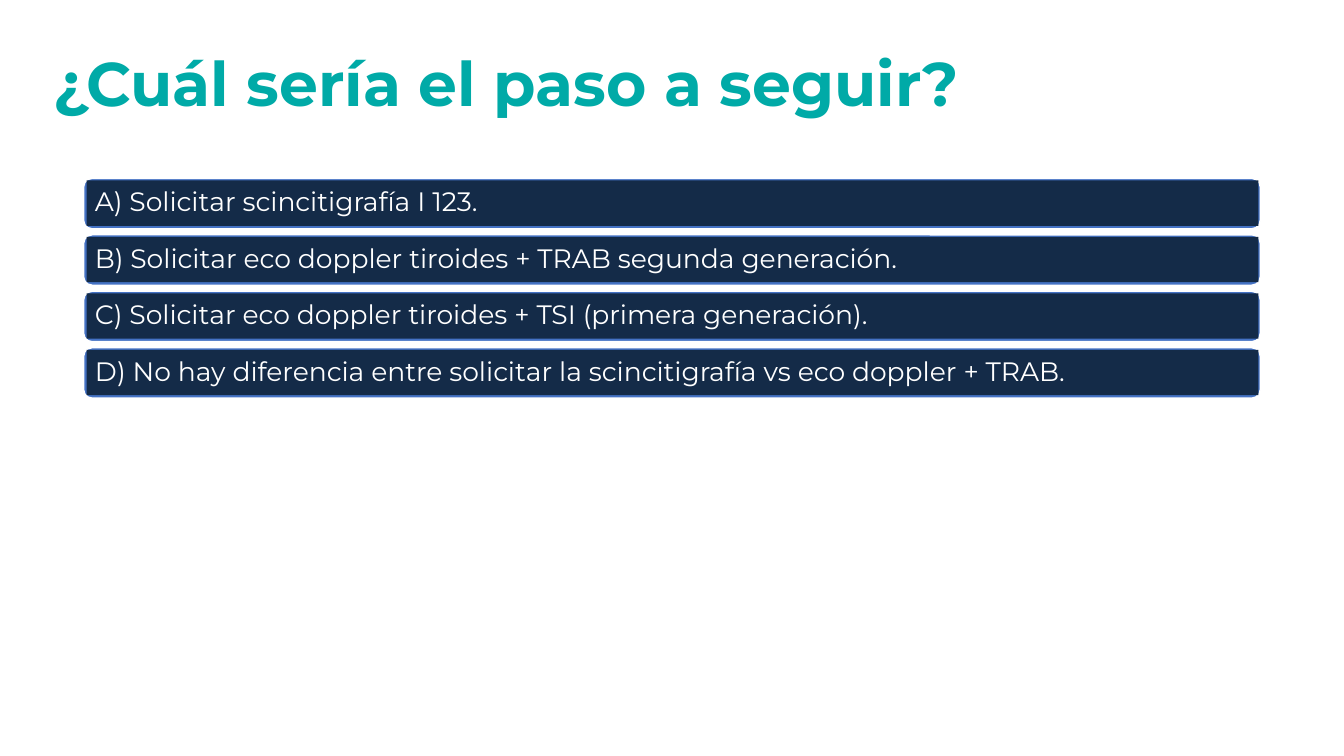
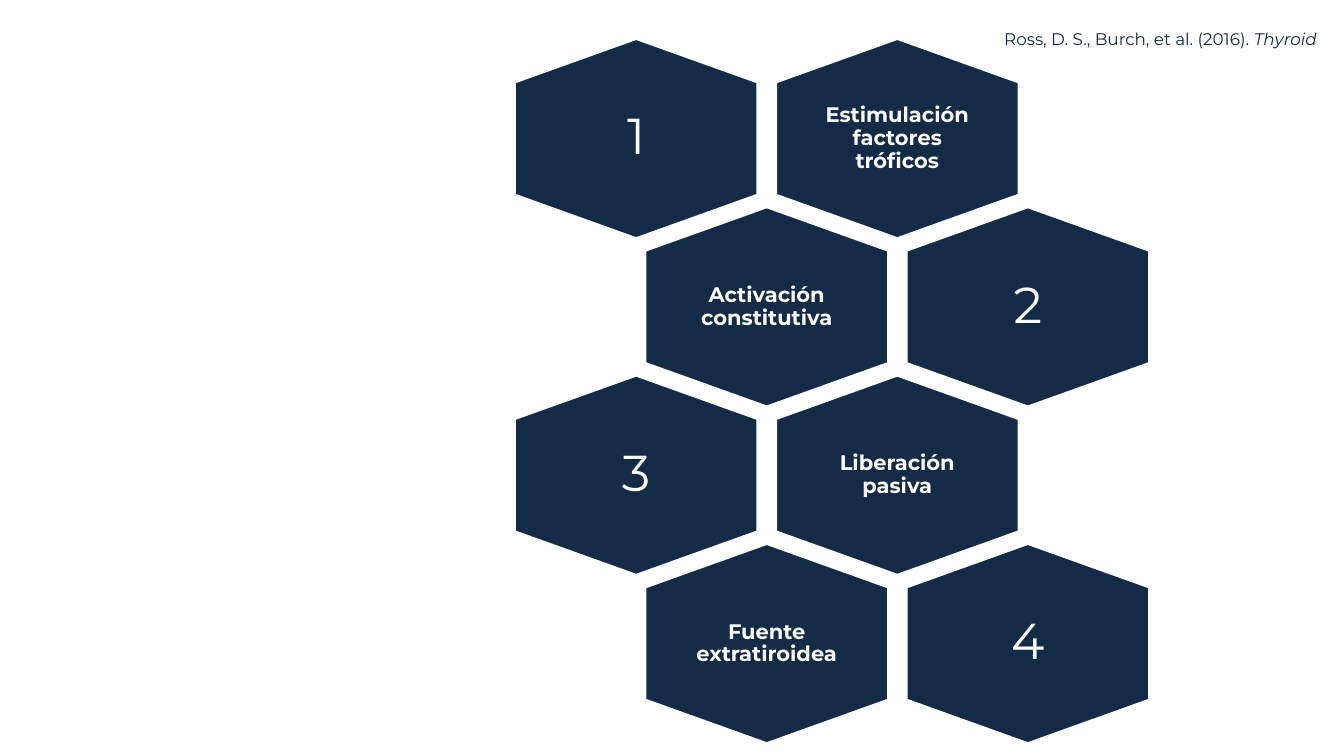
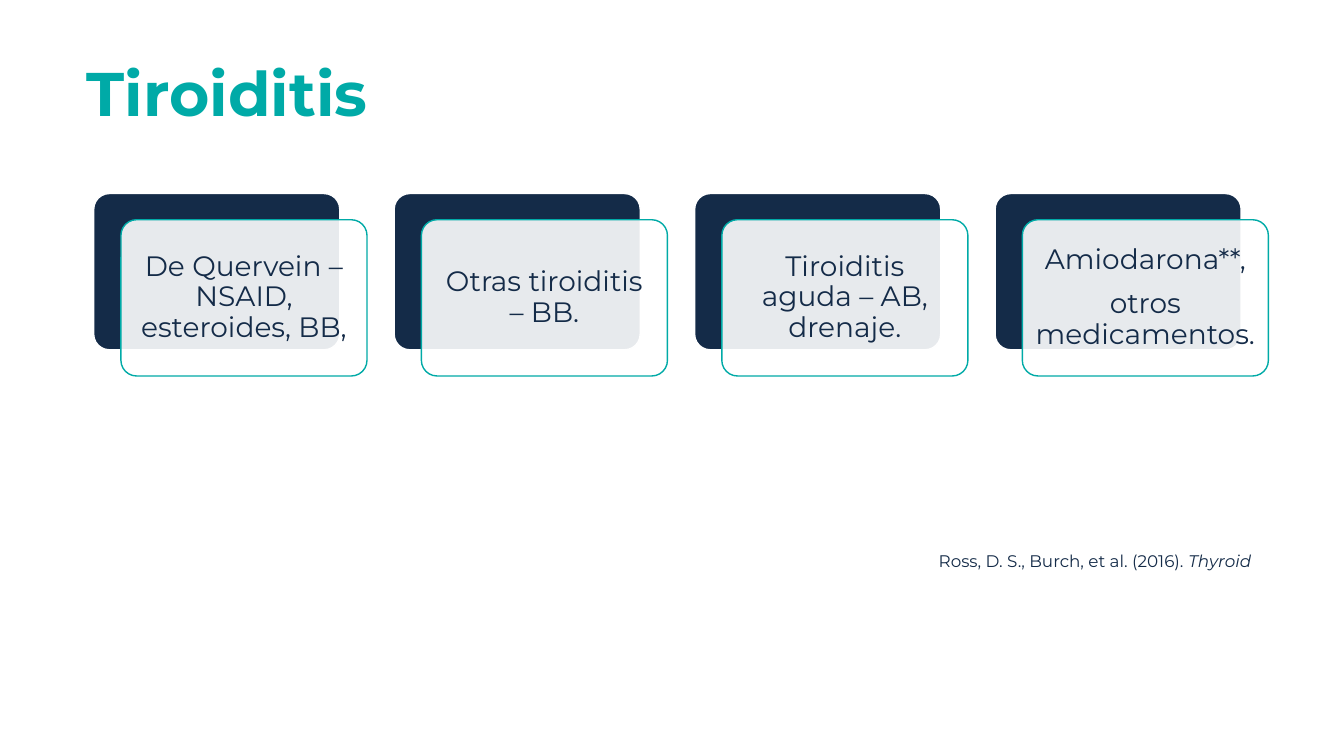
from dataclasses import dataclass

from lxml import etree
from pptx import Presentation
from pptx import util as u
from pptx.dml.color import RGBColor
from pptx.enum import shapes as kinds, text as txt
from pptx.oxml.ns import qn
from pptx.shapes.autoshape import Shape
from pptx.slide import Slide
from pptx.text.text import TextFrame

FONT = "Montserrat"
NAVY, TEAL, BLUE, WHITE = "142B48", "00AAA7", "4472C4", "FFFFFF"
LEFT, MID, RIGHT = txt.PP_ALIGN.LEFT, txt.PP_ALIGN.CENTER, txt.PP_ALIGN.RIGHT
RECT = kinds.MSO_SHAPE.RECTANGLE
ROUND = kinds.MSO_SHAPE.ROUNDED_RECTANGLE


@dataclass(frozen=True)
class Box:
    x: float
    y: float
    w: float
    h: float

    def inches(self) -> list[u.Length]:
        return [u.Inches(n) for n in (self.x, self.y, self.w, self.h)]

    def move(self, dx: float, dy: float) -> "Box":
        return Box(self.x + dx, self.y + dy, self.w, self.h)


@dataclass(frozen=True)
class Type:
    size: float
    color: str
    bold: bool = False
    align: txt.PP_ALIGN = MID
    lead: float = 0.9


@dataclass(frozen=True)
class Card:
    lines: tuple[str, ...]
    inset: float = 0.14


HEAD = Type(44, TEAL, True, LEFT)
CHOICE = Type(19, WHITE, align=LEFT)
NUMBER = Type(36, WHITE)
CAUSE = Type(15, WHITE, True)
BODY = Type(20, NAVY)
CITE = Type(12, NAVY, align=RIGHT, lead=1)

CHOICES = (
    "A) Solicitar scincitigrafía I 123.",
    "B) Solicitar eco doppler tiroides + TRAB segunda generación.",
    "C) Solicitar eco doppler tiroides + TSI (primera generación).",
    "D) No hay diferencia entre solicitar la scincitigrafía vs eco doppler + TRAB.",
)
CAUSES = (
    "Estimulación factores tróficos",
    "Activación constitutiva",
    "Liberación pasiva",
    "Fuente extratiroidea",
)
CARDS = (
    Card(("De Quervein – NSAID, esteroides, BB,",)),
    Card(("Otras tiroiditis – BB.",)),
    Card(("Tiroiditis aguda – AB, drenaje.",)),
    Card(("Amiodarona**,", "otros medicamentos."), 0.05),
)


def rgb(code: str) -> RGBColor:
    return RGBColor.from_string(code)


def paint(shape: Shape, fill: str, line: str | None = None) -> None:
    shape.shadow.inherit = False
    shape.fill.solid()
    shape.fill.fore_color.rgb = rgb(fill)
    if line is None:
        shape.line.fill.background()
    else:
        shape.line.color.rgb = rgb(line)
        shape.line.width = u.Pt(1)


def fade(shape: Shape, share: int) -> None:
    """Set the opacity of a solid fill, in percent."""
    color = shape.fill._xPr.find(qn("a:solidFill"))[0]
    etree.SubElement(color, qn("a:alpha")).set("val", str(share * 1000))


def write(frame: TextFrame, lines: tuple[str, ...], style: Type,
          inset: float = 0.05, anchor: txt.MSO_ANCHOR = txt.MSO_ANCHOR.MIDDLE) -> None:
    frame.word_wrap = True
    frame.vertical_anchor = anchor
    frame.margin_left = frame.margin_right = u.Inches(inset)
    frame.margin_top = frame.margin_bottom = u.Inches(0.05)
    for i, line in enumerate(lines):
        para = frame.add_paragraph() if i else frame.paragraphs[0]
        para.add_run().text = line
        para.alignment = style.align
        para.line_spacing = style.lead
        para.space_before = u.Pt(10 if i else 0)
        para.font.name = FONT
        para.font.size = u.Pt(style.size)
        para.font.bold = style.bold
        para.font.color.rgb = rgb(style.color)


def block(slide: Slide, kind: kinds.MSO_SHAPE, box: Box, fill: str,
          line: str | None = None, bend: float = 0) -> Shape:
    shape = slide.shapes.add_shape(kind, *box.inches())
    if kind == ROUND:
        shape.adjustments[0] = bend
    paint(shape, fill, line)
    return shape


def title(slide: Slide, words: str, x: float, y: float) -> None:
    area = slide.shapes.add_textbox(*Box(x, y, 11.5, 1.45).inches())
    write(area.text_frame, (words,), HEAD)


def cite(slide: Slide, x: float, y: float) -> None:
    frame = slide.shapes.add_textbox(*Box(x, y, 3.4, 0.3).inches()).text_frame
    write(frame, ("Ross, D. S., Burch, et al. (2016). ",), CITE,
          anchor=txt.MSO_ANCHOR.TOP)
    run = frame.paragraphs[0].add_run()
    run.text = "Thyroid"
    run.font.italic = True


def hexagon(slide: Slide, box: Box, words: str, style: Type) -> None:
    """Draw a cell with points at top and bottom, and its text."""
    rise = 0.43
    mid, end, foot = box.x + box.w / 2, box.x + box.w, box.y + box.h
    dots = [(mid, box.y), (end, box.y + rise), (end, foot - rise),
            (mid, foot), (box.x, foot - rise), (box.x, box.y + rise)]
    first, *rest = [(u.Inches(x), u.Inches(y)) for x, y in dots]
    pen = slide.shapes.build_freeform(*first)
    pen.add_line_segments(rest, close=True)
    shape = pen.convert_to_shape()
    paint(shape, NAVY, WHITE)
    write(shape.text_frame, (words,), style, 0.44)


def quiz(slide: Slide) -> None:
    title(slide, "¿Cuál sería el paso a seguir?", 0.48, 0.13)
    for row, words in enumerate(CHOICES):
        frame = Box(0.83, 1.77 + row * 0.56, 11.67, 0.5)
        block(slide, ROUND, frame, BLUE, WHITE, 0.17)
        bar = block(slide, RECT, Box(0.86, frame.y + 0.02, 11.62, 0.45), NAVY)
        write(bar.text_frame, (words,), CHOICE, 0.08)


def causes(slide: Slide) -> None:
    pitch = 2.59
    for row, words in enumerate(CAUSES):
        odd = row % 2
        left = Box(5.11 + odd * pitch / 2, 0.39 + row * 1.67, 2.4, 1.97)
        pair = [(str(row + 1), NUMBER), (words, CAUSE)]
        for col, (label, style) in enumerate(reversed(pair) if odd else pair):
            hexagon(slide, left.move(col * pitch, 0), label, style)
    cite(slide, 9.71, 0.24)


def types(slide: Slide) -> None:
    title(slide, "Tiroiditis", 0.81, 0.23)
    for col, card in enumerate(CARDS):
        back = Box(0.93 + col * 2.98, 1.92, 2.44, 1.55)
        block(slide, ROUND, back, NAVY, WHITE, 0.1)
        panel = block(slide, ROUND, back.move(0.27, 0.26), WHITE, TEAL, 0.1)
        fade(panel, 90)
        write(panel.text_frame, card.lines, BODY, card.inset)
    cite(slide, 9.06, 5.41)


def main() -> None:
    deck = Presentation()
    deck.slide_width, deck.slide_height = u.Inches(13.33), u.Inches(7.5)
    for draw in (quiz, causes, types):
        draw(deck.slides.add_slide(deck.slide_layouts[6]))
    deck.save("out.pptx")


if __name__ == "__main__":
    main()
